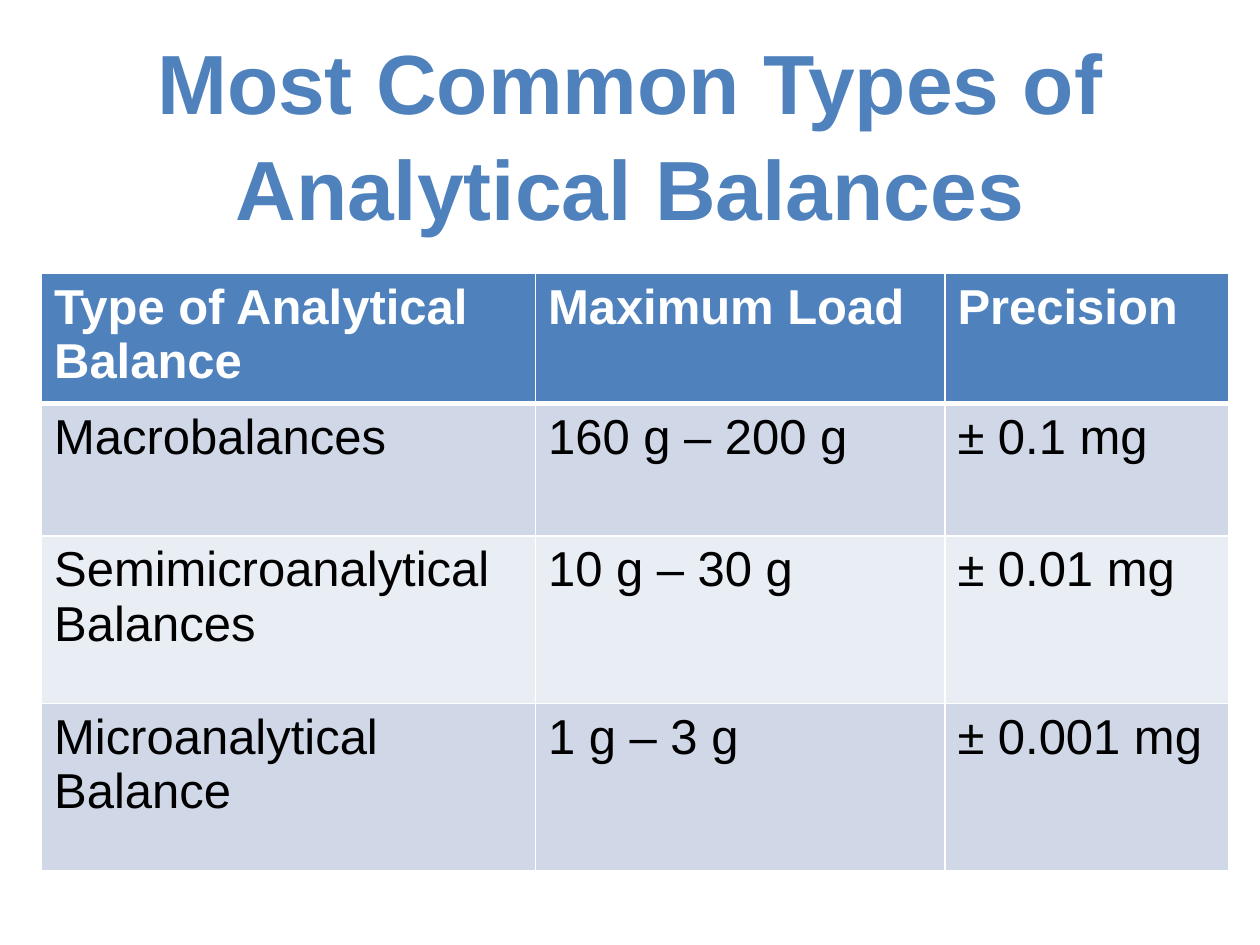
from dataclasses import dataclass

from lxml.etree import SubElement
from pptx import Presentation
from pptx.dml.color import RGBColor
from pptx.enum.text import MSO_ANCHOR, PP_ALIGN
from pptx.oxml.ns import qn
from pptx.util import Inches, Pt


@dataclass(frozen=True)
class Theme:
    font: str = "Arial"
    accent: str = "4F81BD"
    light: str = "FFFFFF"
    dark: str = "000000"
    bands: tuple = ("D0D8E8", "E9EDF4")
    title_size: int = 48
    table_size: int = 28
    line: int = 1
    header_line: int = 3


THEME = Theme()
COLUMNS = (3.92, 3.25, 2.25)
ROW_HEIGHTS = (0.95, 1.05, 1.33, 1.33)
BALANCES = (
    ("Type of Analytical Balance", "Maximum Load", "Precision"),
    ("Macrobalances", "160 g – 200 g", "± 0.1 mg"),
    ("Semimicroanalytical Balances", "10 g – 30 g", "± 0.01 mg"),
    ("Microanalytical\nBalance", "1 g – 3 g", "± 0.001 mg"),
)


def format_text(tf, size, color, bold):
    values = {"name": THEME.font, "size": Pt(size), "bold": bold}
    for p in tf.paragraphs:
        for r in p.runs:
            for name, value in values.items():
                setattr(r.font, name, value)
            r.font.color.rgb = RGBColor.from_string(color)


def add_title(s, text, width):
    tf = s.shapes.add_textbox(0, Inches(0.58), width, Inches(0.92)).text_frame
    tf.word_wrap = True
    tf.vertical_anchor = MSO_ANCHOR.MIDDLE
    tf.text = text
    p = tf.paragraphs[0]
    p.alignment = PP_ALIGN.CENTER
    p.line_spacing = 1.05
    format_text(tf, THEME.title_size, THEME.accent, True)


def set_borders(cell, top, bottom):
    tc_pr = cell._tc.get_or_add_tcPr()
    widths = {"L": THEME.line, "R": THEME.line, "T": top, "B": bottom}
    for side, width in widths.items():
        ln = SubElement(tc_pr, qn(f"a:ln{side}"), w=str(Pt(width)))
        fill = SubElement(ln, qn("a:solidFill"))
        SubElement(fill, qn("a:srgbClr"), val=THEME.light)


def fill_cell(cell, text, row):
    header = row == 0
    set_borders(cell,
                top=THEME.header_line if row == 1 else THEME.line,
                bottom=THEME.header_line if header else THEME.line)
    color = THEME.accent if header else THEME.bands[(row - 1) % 2]
    cell.fill.solid()
    cell.fill.fore_color.rgb = RGBColor.from_string(color)
    cell.text = text
    format_text(cell.text_frame, THEME.table_size,
                THEME.light if header else THEME.dark, header)


def add_balance_table(s, left, top):
    table = s.shapes.add_table(
        len(BALANCES), len(COLUMNS), Inches(left), Inches(top),
        Inches(sum(COLUMNS)), Inches(sum(ROW_HEIGHTS))).table
    for column, width in zip(table.columns, COLUMNS):
        column.width = Inches(width)
    for row, height in zip(table.rows, ROW_HEIGHTS):
        row.height = Inches(height)
    for i, texts in enumerate(BALANCES):
        for j, text in enumerate(texts):
            fill_cell(table.cell(i, j), text, i)


def main():
    prs = Presentation()
    prs.slide_width, prs.slide_height = Inches(10), Inches(7.5)
    s = prs.slides.add_slide(prs.slide_layouts[6])

    # Heading
    add_title(s, "Most Common Types of Analytical Balances", prs.slide_width)

    # Comparison of balances
    add_balance_table(s, left=0.33, top=2.17)

    prs.save("out.pptx")


if __name__ == "__main__":
    main()
